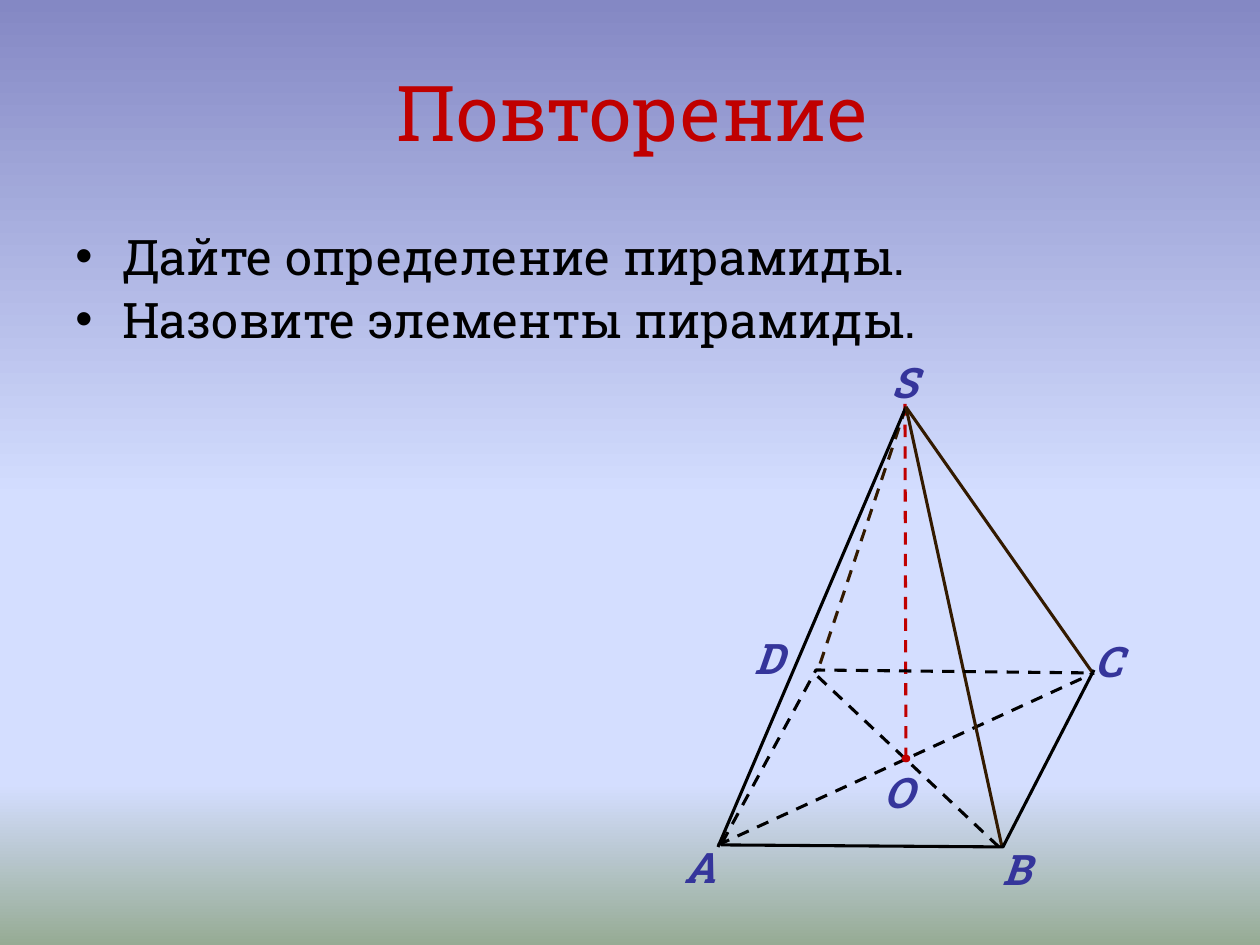
"""Builds the revision slide with questions about a pyramid and its drawing."""
from copy import deepcopy

from lxml.etree import SubElement
from pptx import Presentation
from pptx.dml.color import RGBColor
from pptx.enum.dml import MSO_LINE
from pptx.enum.shapes import MSO_CONNECTOR, MSO_SHAPE
from pptx.enum.text import MSO_ANCHOR, PP_ALIGN
from pptx.oxml.ns import qn
from pptx.util import Emu, Pt

SCALE = 914400 / 126
FONT = "Roboto Slab"
COLORS = {
    "red": "C00000", "black": "000000", "brown": "331A00", "label": "35359B",
    "sky_top": "8488C4", "sky": "D4DEFF", "ground": "96AB94",
}


def add_text(shapes, text, left, top, width, height, size=24, color="black", bold=False,
             italic=False, align=PP_ALIGN.LEFT, anchor=MSO_ANCHOR.TOP, bullet=None, before=0):
    box = shapes.add_textbox(*[Emu(round(n * SCALE)) for n in (left, top, width, height)])
    frame = box.text_frame
    frame.word_wrap = True
    frame.vertical_anchor = anchor
    for index, line in enumerate(text.split("\n")):
        para = frame.paragraphs[0] if index == 0 else frame.add_paragraph()
        para.alignment = align
        para.space_before = Pt(before if index else 0)
        span = para.add_run()
        span.text = line
        span.font.name = FONT
        span.font.size = Pt(size)
        span.font.bold = bold
        span.font.italic = italic
        span.font.color.rgb = RGBColor.from_string(COLORS[color])
        if bullet:
            properties = para._p.get_or_add_pPr()
            indent = round(47 * SCALE)
            properties.set("marL", str(indent))
            properties.set("indent", str(-indent))
            SubElement(properties, qn("a:buFont")).set("typeface", "Arial")
            SubElement(properties, qn("a:buChar")).set("char", bullet)


def set_stroke(shape, color, dashed=False, width=1.75):
    shape.line.color.rgb = RGBColor.from_string(COLORS[color])
    shape.line.width = Pt(width)
    if dashed:
        shape.line.dash_style = MSO_LINE.DASH


deck = Presentation()
deck.slide_width = Emu(round(1260 * SCALE))
deck.slide_height = Emu(round(945 * SCALE))
page = deck.slides.add_slide(deck.slide_layouts[6])

fill = page.background.fill
fill.gradient()
fill.gradient_angle = 270
stop_list = fill.gradient_stops[0]._gs.getparent()
for extra in range(2):
    stop_list.append(deepcopy(stop_list[0]))
stops = [(0, "sky_top"), (0.53, "sky"), (0.83, "sky"), (1, "ground")]
for stop, (position, color) in zip(fill.gradient_stops, stops):
    stop.position = position
    stop.color.rgb = RGBColor.from_string(COLORS[color])

add_text(page.shapes, "Повторение", 66, 32, 1134, 158, size=44, color="red",
         align=PP_ALIGN.CENTER, anchor=MSO_ANCHOR.MIDDLE)
add_text(page.shapes, "Дайте определение пирамиды.\nНазовите элементы пирамиды.",
         63, 220, 1134, 624, size=28, bullet="•", before=2.5)

pyramid = page.shapes.add_group_shape().shapes
apex = (906, 407)
edges = [
    ((906, 760), (905, 404), "red", True),
    (apex, (818, 670), "brown", True),
    (apex, (718, 847), "black", False),
    ((718, 845), (1094, 673), "black", True),
    ((999, 847), (813, 672), "black", True),
    (apex, (1002, 847), "brown", False),
    (apex, (1092, 672), "brown", False),
]
for start, end, color, dashed in edges:
    ends = [Emu(round(n * SCALE)) for n in start + end]
    edge = pyramid.add_connector(MSO_CONNECTOR.STRAIGHT, *ends)
    set_stroke(edge, color, dashed)
    SubElement(edge._element.spPr, qn("a:effectLst"))

base_sides = [
    ([(722, 843), (816, 670), (1094, 673)], True),
    ([(1094, 670), (1003, 847), (721, 845)], False),
]
for points, dashed in base_sides:
    builder = pyramid.build_freeform(*points[0], scale=SCALE)
    builder.add_line_segments(points[1:], close=False)
    side = builder.convert_to_shape()
    side.fill.background()
    side.shadow.inherit = False
    set_stroke(side, "black", dashed)

center = pyramid.add_shape(MSO_SHAPE.OVAL, *[Emu(round(n * SCALE)) for n in (903, 756, 6, 5)])
center.fill.solid()
center.fill.fore_color.rgb = RGBColor.from_string(COLORS["red"])
center.shadow.inherit = False
set_stroke(center, "red", width=1.5)

labels = [("А", 672, 835), ("В", 990, 837), ("С", 1082, 629),
          ("D", 742, 626), ("S", 879, 350), ("О", 871, 760)]
for letter, left, top in labels:
    add_text(pyramid, letter, left, top, 69, 63, color="label", bold=True, italic=True)

deck.save("out.pptx")
